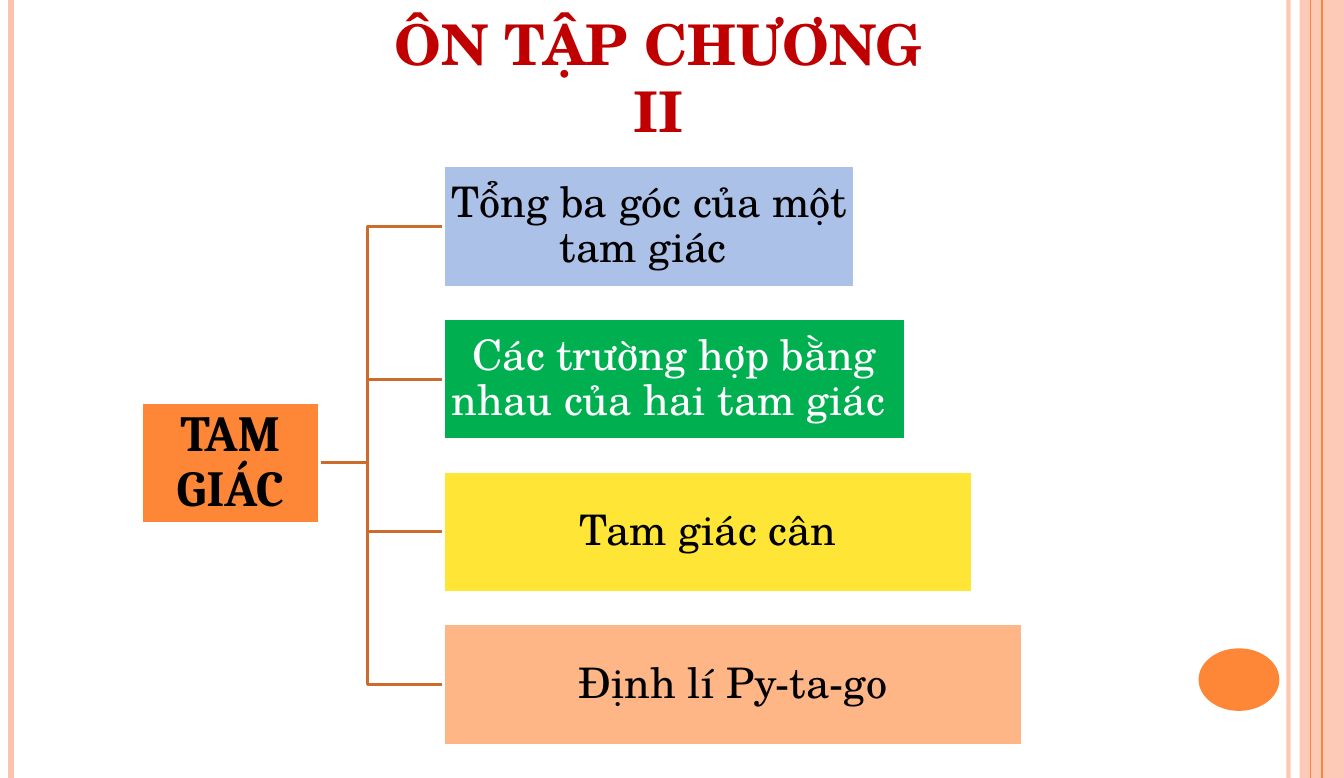
import pptx
import pptx.util
import pptx.dml.color
import pptx.enum.shapes
import pptx.enum.text
import pptx.oxml.ns
import lxml.etree

Pt = pptx.util.Pt
SHAPE = pptx.enum.shapes.MSO_SHAPE


def color(hex_value):
    return pptx.dml.color.RGBColor.from_string(hex_value)


def write_text(shape, text, size, font="TeX Gyre Schola", fill="000000", bold=False,
               spacing=1.0, anchor="MIDDLE", margins=(1.5, 1.5)):
    frame = shape.text_frame
    frame.word_wrap = True
    frame.auto_size = pptx.enum.text.MSO_AUTO_SIZE.NONE
    frame.vertical_anchor = pptx.enum.text.MSO_ANCHOR[anchor]
    frame.margin_left = frame.margin_right = Pt(margins[0])
    frame.margin_top = frame.margin_bottom = Pt(margins[1])
    paragraph = frame.paragraphs[0]
    paragraph.alignment = pptx.enum.text.PP_ALIGN.CENTER
    paragraph.line_spacing = spacing
    paragraph.space_before = Pt(0)
    run = paragraph.add_run()
    run.text = text
    run.font.size = Pt(size)
    run.font.name = font
    run.font.bold = bold
    run.font.color.rgb = color(fill)


presentation = pptx.Presentation()
presentation.slide_width = Pt(957.6)
presentation.slide_height = Pt(554.4)
slide = presentation.slides.add_slide(presentation.slide_layouts[5])
shapes = slide.shapes

title = shapes.title
title.left, title.top, title.width, title.height = Pt(268.6), Pt(2.2), Pt(401), Pt(57)
write_text(title, "ÔN TẬP CHƯƠNG II", 40, fill="C00000", bold=True,
           anchor="TOP", margins=(8.6, 4.3))

side_band = shapes.add_shape(SHAPE.RECTANGLE, Pt(926), Pt(0), Pt(31.6), Pt(554.4))
corner_dot = shapes.add_shape(SHAPE.OVAL, Pt(854), Pt(462), Pt(57.6), Pt(44.6))
for shape, fill in [(side_band, "FEC3AE"), (corner_dot, "FE8637")]:
    shape.shadow.inherit = False
    shape.fill.solid()
    shape.fill.fore_color.rgb = color(fill)
    shape.line.fill.background()

border_lines = [
    (918, "FEC3AE", 3),
    (7.9, "FEC3AE", 4.5),
    (941.8, "FE8637", 1.5),
    (933.8, "FE8637", 0.75),
]
translucent = [(side_band, 87000)]
for x, line_color, width in border_lines:
    border = shapes.add_connector(pptx.enum.shapes.MSO_CONNECTOR.STRAIGHT,
                                  Pt(x), Pt(0), Pt(x), Pt(554.4))
    border.line.color.rgb = color(line_color)
    border.line.width = Pt(width)
    lxml.etree.SubElement(border._element.spPr, pptx.oxml.ns.qn("a:effectLst"))
    if width == 3:
        translucent.append((border, 93000))

for shape, opacity in translucent:
    solid = next(shape._element.spPr.iter(pptx.oxml.ns.qn("a:srgbClr")))
    lxml.etree.SubElement(solid, pptx.oxml.ns.qn("a:alpha"), val=str(opacity))

box_height = 86.4
topic_left, topic_top, topic_pitch = 316, 118.2, 108.8
root_left, root_width, root_middle = 100.8, 126.7, 329.9
trunk_x = 262

topics = [
    ("Tổng ba góc của một tam giác ", 293, "ACC1E8", "000000"),
    ("Các trường hợp bằng nhau của hai tam giác ", 329, "00B050", "FFFFFF"),
    ("Tam giác cân", 376.6, "FFE636", "000000"),
    ("Định lí Py-ta-go", 412.6, "FEB687", "000000"),
]
boxes = [(root_left, root_middle - box_height / 2, root_width, "FE8637",
          dict(text="TAM GIÁC", size=36, font="Cambria", bold=True, margins=(2, 2)))]

for index, (text, width, fill, text_color) in enumerate(topics):
    top = topic_top + index * topic_pitch
    middle = top + box_height / 2
    builder = shapes.build_freeform(Pt(root_left + root_width), Pt(root_middle))
    builder.add_line_segments([
        (Pt(trunk_x), Pt(root_middle)),
        (Pt(trunk_x), Pt(middle)),
        (Pt(topic_left), Pt(middle)),
    ], close=False)
    branch = builder.convert_to_shape()
    branch.shadow.inherit = False
    branch.fill.background()
    branch.line.color.rgb = color("CB6B2C")
    branch.line.width = Pt(2)
    boxes.append((topic_left, top, width, fill, dict(text=text, size=30, fill=text_color)))

for left, top, width, fill, text_format in boxes:
    box = shapes.add_shape(SHAPE.RECTANGLE, Pt(left), Pt(top), Pt(width), Pt(box_height))
    box.shadow.inherit = False
    box.fill.solid()
    box.fill.fore_color.rgb = color(fill)
    box.line.color.rgb = color("FFFFFF")
    box.line.width = Pt(2)
    write_text(box, spacing=0.9, **text_format)

presentation.save("out.pptx")
